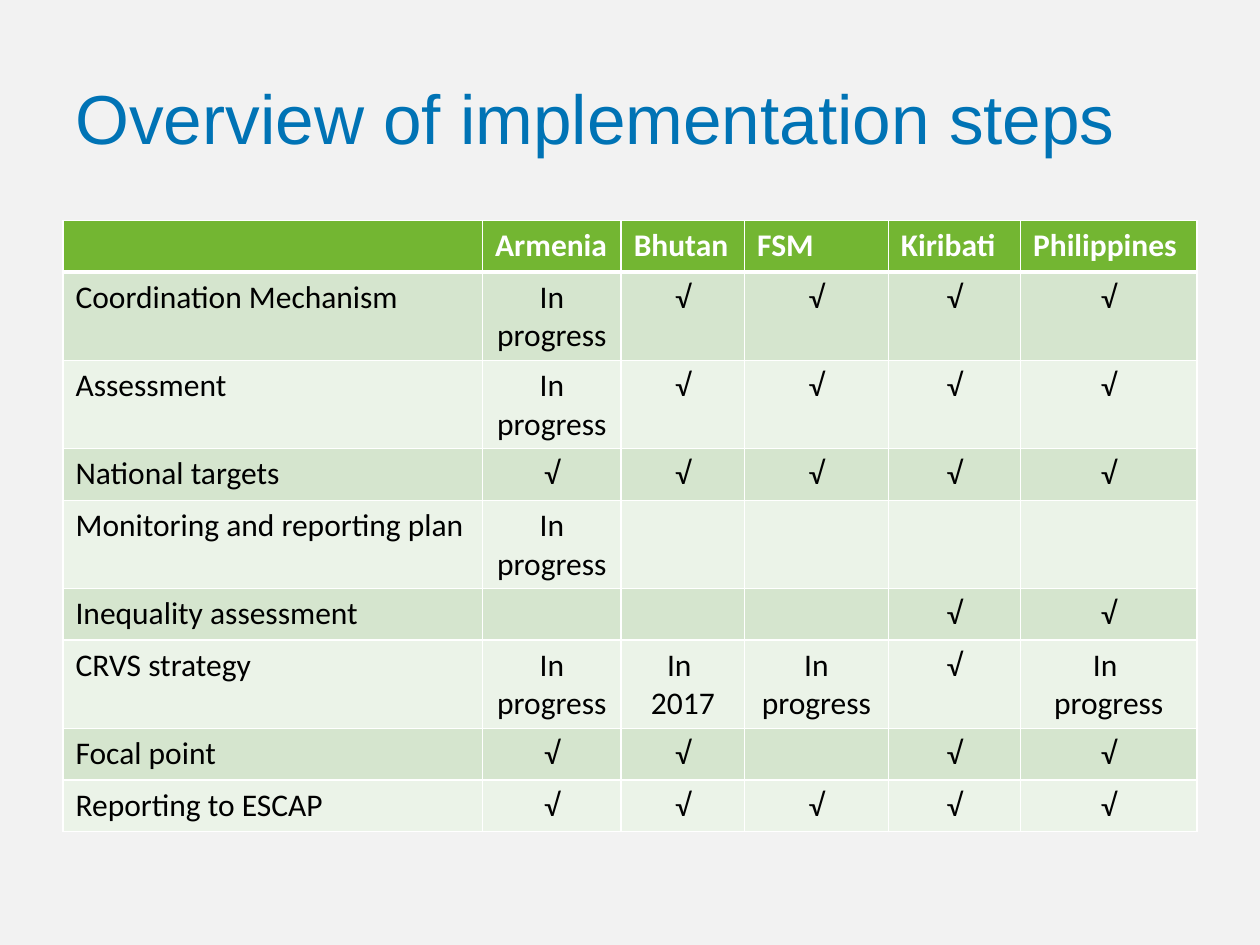
"""Build the slide that shows implementation steps by country."""
from lxml.etree import SubElement
from pptx import Presentation
from pptx.dml.color import RGBColor
from pptx.enum.text import MSO_ANCHOR, PP_ALIGN
from pptx.oxml.ns import qn
from pptx.util import Inches, Pt

COLORS = {
    "background": "F2F2F2",
    "title": "0073B5",
    "header": "73B632",
    "odd": "D5E5CE",
    "even": "EBF3E8",
    "white": "FFFFFF",
    "black": "000000",
}
TITLE = "Overview of implementation steps"
DONE, PROGRESS = "√", "In progress"
ROWS = [
    ["", "Armenia", "Bhutan", "FSM", "Kiribati", "Philippines"],
    ["Coordination Mechanism", PROGRESS, DONE, DONE, DONE, DONE],
    ["Assessment", PROGRESS, DONE, DONE, DONE, DONE],
    ["National targets", DONE, DONE, DONE, DONE, DONE],
    ["Monitoring and reporting plan", PROGRESS, "", "", "", ""],
    ["Inequality assessment", "", "", "", DONE, DONE],
    ["CRVS strategy", PROGRESS, "In \n2017", PROGRESS, DONE, "In \nprogress"],
    ["Focal point", DONE, DONE, "", DONE, DONE],
    ["Reporting to ESCAP", DONE, DONE, DONE, DONE, DONE],
]
COLUMN_WIDTHS = [3.33, 1.1, 0.98, 1.14, 1.05, 1.4]
ROW_HEIGHT = 0.41


def color(name):
    return RGBColor.from_string(COLORS[name])


def style_font(font, name, size, color_name, bold=False):
    font.name, font.size, font.bold = name, Pt(size), bold
    font.color.rgb = color(color_name)


def add_borders(cell, row):
    properties = cell._tc.get_or_add_tcPr()
    widths = {"L": 1, "R": 1, "T": 3 if row == 1 else 1, "B": 3 if row == 0 else 1}
    for side, width in widths.items():
        line = SubElement(properties, qn(f"a:ln{side}"), w=str(Pt(width)))
        fill = SubElement(line, qn("a:solidFill"))
        SubElement(fill, qn("a:srgbClr"), val=COLORS["white"])


def fill_cell(cell, text, row, column):
    is_header = row == 0
    add_borders(cell, row)
    cell.fill.solid()
    cell.fill.fore_color.rgb = color("header" if is_header else "odd" if row % 2 else "even")
    cell.text = text
    for paragraph in cell.text_frame.paragraphs:
        centred = not is_header and column > 0
        paragraph.alignment = PP_ALIGN.CENTER if centred else PP_ALIGN.LEFT
        style_font(paragraph.font, "Calibri", 18, "white" if is_header else "black", is_header)


def add_title(slide):
    box = slide.shapes.add_textbox(Inches(0.5), Inches(0.3), Inches(9), Inches(1.25))
    frame = box.text_frame
    frame.word_wrap = True
    frame.vertical_anchor = MSO_ANCHOR.MIDDLE
    paragraph = frame.paragraphs[0]
    paragraph.text = TITLE
    style_font(paragraph.font, "Arial", 39.6, "title")


def add_steps_table(slide):
    table = slide.shapes.add_table(
        len(ROWS), len(COLUMN_WIDTHS), Inches(0.5), Inches(1.75),
        Inches(sum(COLUMN_WIDTHS)), Inches(ROW_HEIGHT * len(ROWS))).table
    for column, width in zip(table.columns, COLUMN_WIDTHS):
        column.width = Inches(width)
    for row, texts in enumerate(ROWS):
        table.rows[row].height = Inches(ROW_HEIGHT)
        for column, text in enumerate(texts):
            fill_cell(table.cell(row, column), text, row, column)


def main():
    presentation = Presentation()
    presentation.slide_width, presentation.slide_height = Inches(10), Inches(7.5)
    slide = presentation.slides.add_slide(presentation.slide_layouts[6])
    slide.background.fill.solid()
    slide.background.fill.fore_color.rgb = color("background")
    add_title(slide)
    add_steps_table(slide)
    presentation.save("out.pptx")


if __name__ == "__main__":
    main()
